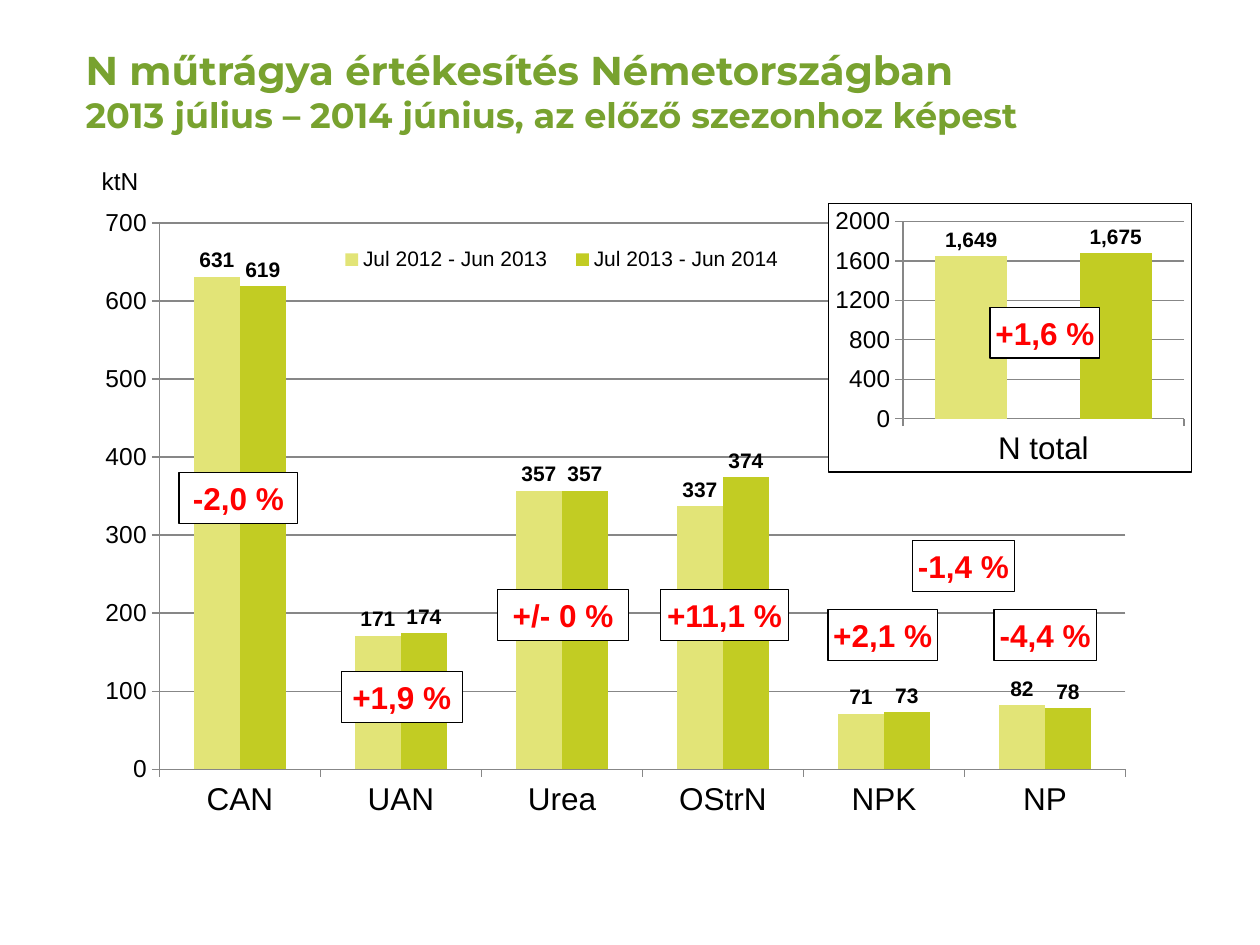
from dataclasses import dataclass

from lxml import etree
from pptx import Presentation
from pptx.chart.data import CategoryChartData
from pptx.dml.color import RGBColor
from pptx.enum import chart as ch, shapes, text
from pptx.oxml import parse_xml
from pptx.oxml.ns import nsdecls, qn
from pptx.util import Cm, Pt

GREEN, BLACK, WHITE, RED, GREY = "78A22F", "000000", "FFFFFF", "FF0000", "878787"
SEASON_COLORS = ("E2E477", "C2CC23")


@dataclass
class Badge:
    label: str
    left: float
    top: float
    width: float
    wrap: bool = True


@dataclass
class ColumnChart:
    box: tuple[float, float, float, float]
    cats: list[str]
    series: dict[str, list[int]]
    top_value: int
    step: int
    gap: int
    overlap: int
    plot_area: tuple[float, float, float, float]
    legend_area: tuple[float, float, float, float] | None = None
    framed: bool = False


MAIN = ColumnChart(
    box=(1.27, 3.96, 22.86, 12.75),
    cats=["CAN", "UAN", "Urea", "OStrN", "NPK", "NP"],
    series={"Jul 2012 - Jun 2013": [631, 171, 357, 337, 71, 82],
            "Jul 2013 - Jun 2014": [619, 174, 357, 374, 73, 78]},
    top_value=700, step=100, gap=150, overlap=0,
    plot_area=(0.085, 0.042, 0.852, 0.864),
    legend_area=(0.23, 0.07, 0.42, 0.06))
TOTAL = ColumnChart(
    box=(16.69, 4.09, 7.34, 5.44),
    cats=["N total"],
    series={"Series 1": [1649], "Series 2": [1675]},
    top_value=2000, step=400, gap=89, overlap=-100,
    plot_area=(0.205, 0.067, 0.775, 0.735), framed=True)

PRODUCT_BADGES = [
    Badge("-2,0 %", 3.61, 9.53, 2.39),
    Badge("+1,9 %", 6.88, 13.54, 2.44),
    Badge("+/- 0 %", 10.03, 11.89, 2.64),
    Badge("+11,1 %", 13.31, 11.89, 2.59),
    Badge("+2,1 %", 16.69, 12.29, 2.21, wrap=False),
    Badge("-4,4 %", 20.04, 12.29, 2.06, wrap=False),
]
TOTAL_BADGES = [
    Badge("+1,6 %", 19.96, 6.2, 2.21, wrap=False),
    Badge("-1,4 %", 18.39, 10.9, 2.06, wrap=False),
]


def rgb(color: str) -> RGBColor:
    return RGBColor.from_string(color)


def set_font(font, size: float, color: str = BLACK, bold: bool = False,
             name: str = "Arial") -> None:
    font.name, font.size, font.bold = name, Pt(size), bold
    font.color.rgb = rgb(color)


def set_layout(parent, index: int, area: tuple, inner: bool = False) -> None:
    """Place a plot area or legend by fractions of the chart."""
    for old in parent.findall(qn("c:layout")):
        parent.remove(old)
    layout = parse_xml(f"<c:layout {nsdecls('c')}><c:manualLayout/></c:layout>")
    values = [("layoutTarget", "inner")] if inner else []
    values += [("xMode", "edge"), ("yMode", "edge"), *zip("xywh", area)]
    for tag, value in values:
        etree.SubElement(layout[0], qn(f"c:{tag}")).set("val", str(value))
    parent.insert(index, layout)


def add_frame(chart) -> None:
    """Give the chart a white background with a thin black border."""
    chart._chartSpace.find(qn("c:chart")).addnext(parse_xml(
        f"<c:spPr {nsdecls('c', 'a')}>"
        f'<a:solidFill><a:srgbClr val="{WHITE}"/></a:solidFill>'
        f'<a:ln w="{Pt(0.75)}"><a:solidFill><a:srgbClr val="{BLACK}"/></a:solidFill></a:ln>'
        "</c:spPr>"))


def add_columns(s, spec: ColumnChart) -> None:
    data = CategoryChartData(number_format="0")
    data.categories = spec.cats
    for name, values in spec.series.items():
        data.add_series(name, values)
    chart = s.shapes.add_chart(ch.XL_CHART_TYPE.COLUMN_CLUSTERED,
                               *map(Cm, spec.box), data).chart
    set_font(chart.font, 18)
    chart.has_title = False

    plot = chart.plots[0]
    plot.gap_width, plot.overlap, plot.vary_by_categories = spec.gap, spec.overlap, False
    for series, color in zip(plot.series, SEASON_COLORS):
        series.format.fill.solid()
        series.format.fill.fore_color.rgb = rgb(color)
        labels = series.data_labels
        labels.show_value = True
        labels.number_format, labels.number_format_is_linked = "#,##0", False
        labels.position = ch.XL_LABEL_POSITION.OUTSIDE_END
        set_font(labels.font, 12, bold=True)

    axis = chart.value_axis
    axis.minimum_scale, axis.maximum_scale, axis.major_unit = 0, spec.top_value, spec.step
    axis.has_major_gridlines = True
    axis.tick_labels.number_format = "0"
    axis.tick_labels.number_format_is_linked = False
    for ax, size in ((axis, 14), (chart.category_axis, 18)):
        ax.major_tick_mark = ch.XL_TICK_MARK.OUTSIDE
        ax.minor_tick_mark = ch.XL_TICK_MARK.NONE
        set_font(ax.tick_labels.font, size)
    for line in (axis.major_gridlines.format.line, axis.format.line,
                 chart.category_axis.format.line):
        line.color.rgb, line.width = rgb(GREY), Pt(0.75)

    set_layout(chart._chartSpace.chart.plotArea, 0, spec.plot_area, inner=True)
    chart.has_legend = spec.legend_area is not None
    if spec.legend_area:
        legend = chart.legend
        legend.position = ch.XL_LEGEND_POSITION.TOP
        legend.include_in_layout = True
        set_font(legend.font, 12)
        set_layout(legend._element, 1, spec.legend_area)
    if spec.framed:
        add_frame(chart)


def add_badge(s, badge: Badge) -> None:
    sp = s.shapes.add_shape(shapes.MSO_SHAPE.RECTANGLE, Cm(badge.left), Cm(badge.top),
                            Cm(badge.width), Cm(1.02))
    sp.shadow.inherit = False
    sp.fill.solid()
    sp.fill.fore_color.rgb = rgb(WHITE)
    sp.line.color.rgb, sp.line.width = rgb(BLACK), Pt(0.75)
    tf = sp.text_frame
    tf.word_wrap = badge.wrap
    tf.margin_left = tf.margin_right = Cm(0.1)
    tf.margin_top = tf.margin_bottom = Cm(0.13)
    p = tf.paragraphs[0]
    p.text, p.alignment = badge.label, text.PP_ALIGN.CENTER
    set_font(p.font, 18, RED, bold=True)


def add_title(s) -> None:
    title = s.shapes.title
    title.left, title.top, title.width, title.height = map(Cm, (1.47, 0.64, 23.22, 2.36))
    tf = title.text_frame
    tf.text = ("N műtrágya értékesítés Németországban\n"
               "2013 július – 2014 június, az előző szezonhoz képest")
    tf.auto_size, tf.vertical_anchor = text.MSO_AUTO_SIZE.NONE, text.MSO_ANCHOR.MIDDLE
    for p, size in zip(tf.paragraphs, (23, 20)):
        p.alignment = text.PP_ALIGN.LEFT
        set_font(p.font, size, GREEN, bold=True, name="Montserrat")


def add_unit(s) -> None:
    tf = s.shapes.add_textbox(Cm(1.8), Cm(3.23), Cm(1.5), Cm(0.86)).text_frame
    tf.word_wrap = True
    p = tf.paragraphs[0]
    p.text = "ktN"
    set_font(p.font, 14)


def main() -> None:
    prs = Presentation()
    prs.slide_width, prs.slide_height = Cm(25.4), Cm(19.05)
    s = prs.slides.add_slide(prs.slide_layouts[5])
    add_title(s)
    for chart, badges in ((MAIN, PRODUCT_BADGES), (TOTAL, TOTAL_BADGES)):
        add_columns(s, chart)
        for badge in badges:
            add_badge(s, badge)
    add_unit(s)
    prs.save("out.pptx")


if __name__ == "__main__":
    main()
